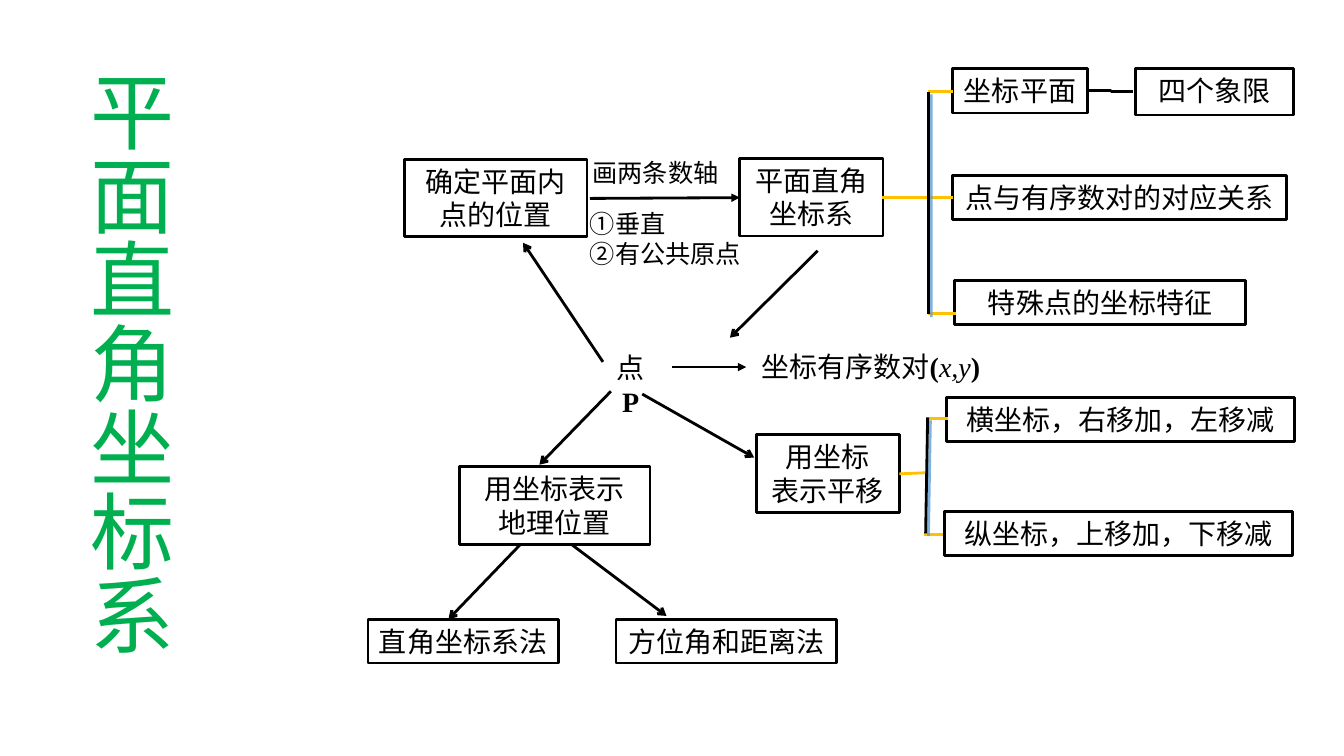
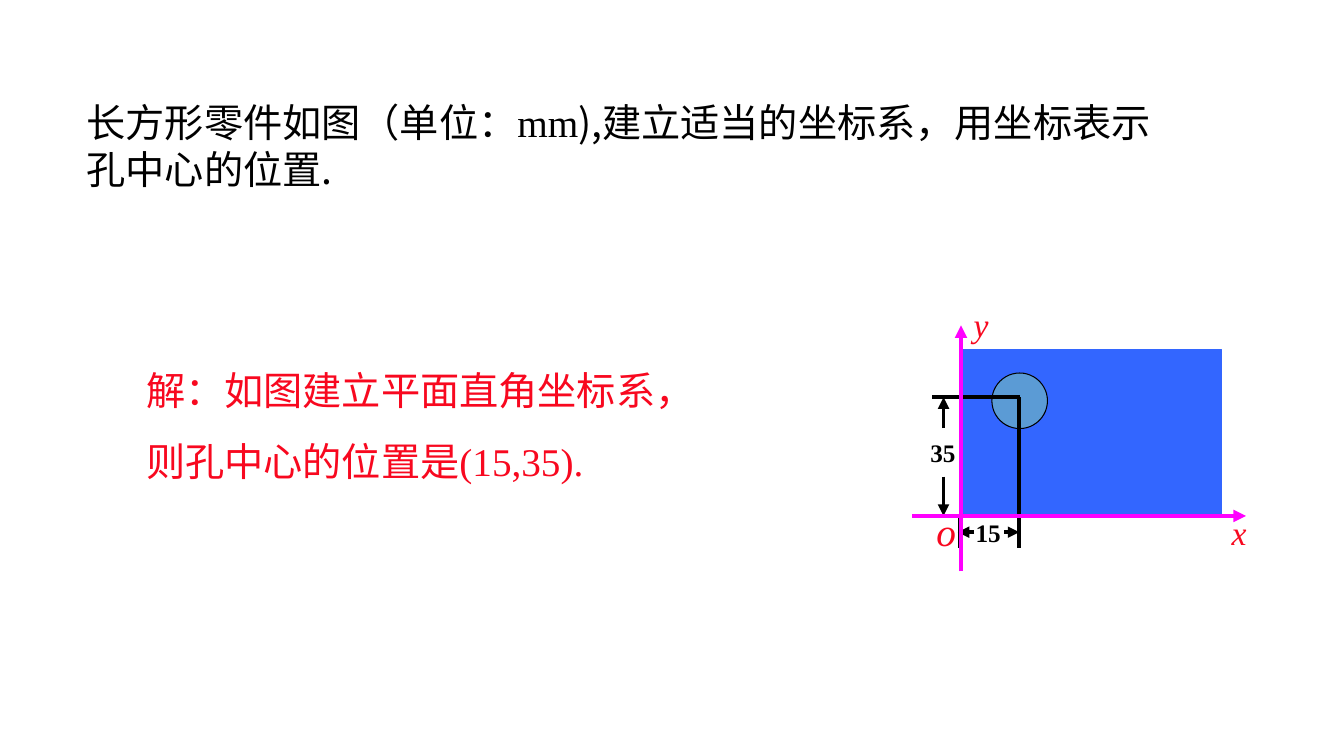
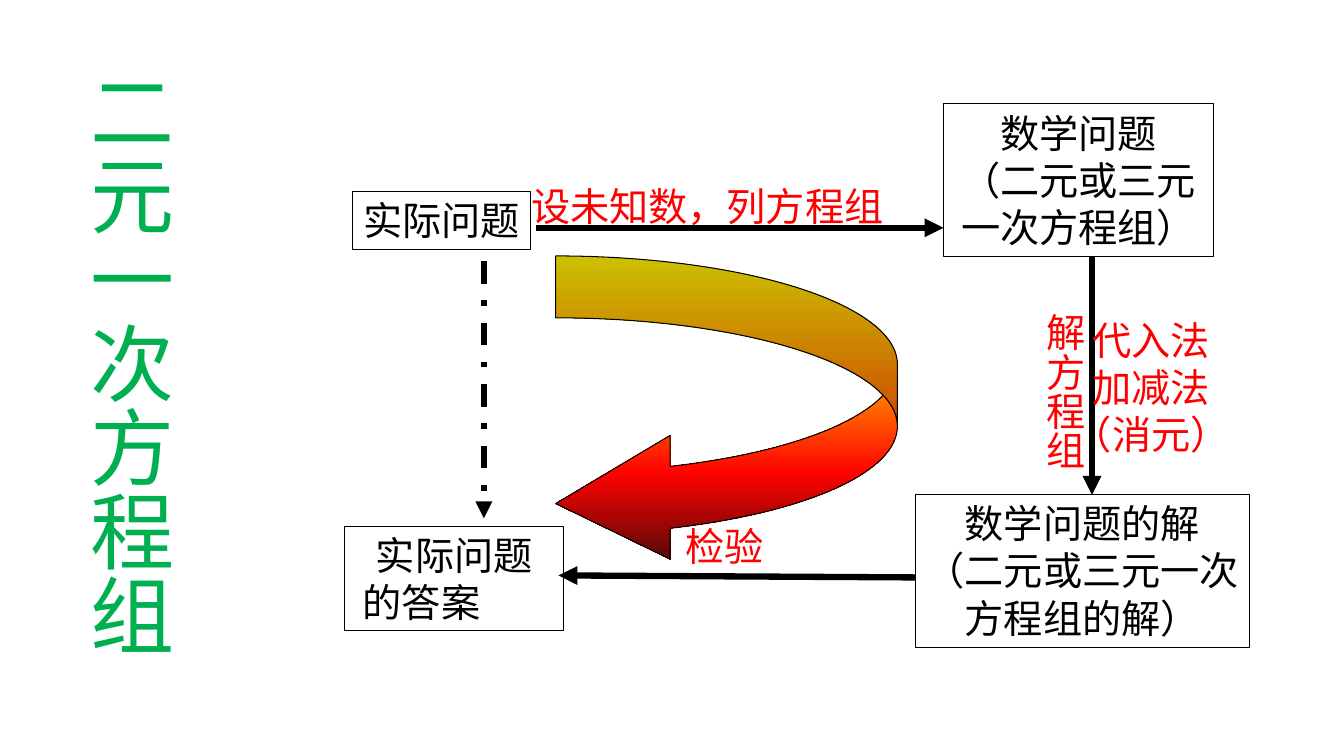
from lxml import etree
from pptx import Presentation
from pptx.dml.color import RGBColor
from pptx.enum.dml import MSO_LINE
from pptx.enum.shapes import MSO_CONNECTOR, MSO_SHAPE
from pptx.enum.text import MSO_ANCHOR, MSO_AUTO_SIZE, PP_ALIGN
from pptx.oxml.ns import qn
from pptx.util import Cm, Pt

LEFT, CENTER = PP_ALIGN.LEFT, PP_ALIGN.CENTER
TOP, BOTTOM = MSO_ANCHOR.TOP, MSO_ANCHOR.BOTTOM
STRAIGHT, ELBOW = MSO_CONNECTOR.STRAIGHT, MSO_CONNECTOR.ELBOW
RECTANGLE, OVAL = MSO_SHAPE.RECTANGLE, MSO_SHAPE.OVAL
CURVED_ARROW = MSO_SHAPE.CURVED_LEFT_ARROW
DASH_DOT, FIXED_SIZE = MSO_LINE.DASH_DOT, MSO_AUTO_SIZE.NONE

BLACK, GREEN, GOLD, RED = "000000", "00B050", "FFC000", "FF0000"
CRIMSON, MAGENTA, PLATE_BLUE, SOFT_BLUE = "F8081F", "FF00FF", "3366FF", "5B9BD5"
CJK_FONT, LATIN_FONT, TITLE_FONT = "Noto Sans CJK SC", "Times New Roman", "Calibri"
LINE_RATIO = 1.2
CM_PER_UNIT = 2.54
SLIDE_SIZE = (13.33, 7.5)
CHAPTER_TITLE_AREA = (0.71, 0.64, 1.95, 5.98)

CJK = (CJK_FONT, False, False)
TITLE = (TITLE_FONT, False, False)
LATIN = (LATIN_FONT, False, False)
BOLD = (LATIN_FONT, True, False)
ITALIC = (LATIN_FONT, False, True)

CONCEPTS = [
    ("确定平面内点的位置", (4.01, 1.58, 1.81, 0.77)),
    ("平面直角\n坐标系", (7.34, 1.57, 1.42, 0.77)),
    ("坐标平面", (9.45, 0.68, 1.34, 0.44)),
    ("四个象限", (11.26, 0.68, 1.57, 0.46)),
    ("点与有序数对的对应关系", (9.45, 1.74, 3.31, 0.44)),
    ("特殊点的坐标特征", (9.47, 2.78, 2.89, 0.44)),
    ("用坐标\n表示平移", (7.5, 4.31, 1.42, 0.77)),
    ("横坐标，右移加，左移减", (9.39, 3.94, 3.45, 0.44)),
    ("纵坐标，上移加，下移减", (9.37, 5.07, 3.45, 0.44)),
    ("用坐标表示\n地理位置", (4.56, 4.63, 1.89, 0.77)),
    ("直角坐标系法", (3.65, 6.15, 1.89, 0.43)),
    ("方位角和距离法", (6.11, 6.15, 2.19, 0.43)),
]
CONCEPT_NOTES = [
    ([[("点", CJK)], [("P", BOLD)]], (5.9, 3.43, 0.71, 0.78), 20, CENTER),
    ("画两条数轴", (5.78, 1.51, 1.47, 0.4), 18, LEFT),
    ("①垂直\n②有公共原点", (5.75, 2.02, 1.7, 0.7), 18, LEFT),
    ([[("坐标有序数对", CJK), ("(", BOLD), ("x,y", ITALIC), (")", BOLD)]],
     (7.34, 3.42, 2.6, 0.43), 20, CENTER),
]
CONCEPT_ARROWS = {
    "triangle": [(5.85, 1.97, 7.34, 1.96), (6.66, 3.64, 7.4, 3.64)],
    "arrow": [
        (8.11, 2.49, 7.24, 3.35), (6.06, 3.88, 5.35, 4.61),
        (5.98, 3.59, 5.19, 2.41), (6.37, 3.91, 7.48, 4.54),
        (5.16, 5.4, 4.45, 6.14), (5.67, 5.4, 6.61, 6.11),
    ],
}
BRACKET_ARMS = [
    (8.75, 1.96, 9.45, 1.96), (9.21, 3.11, 9.48, 3.11), (9.21, 0.91, 9.45, 0.91),
    (8.92, 4.7, 9.21, 4.69), (9.2, 4.15, 9.4, 4.15), (9.16, 5.3, 9.36, 5.3),
]
BRACKET_SPINES = [(9.21, 3.12, 9.21, 0.91), (9.18, 5.29, 9.2, 4.14)]
QUADRANT_LINK = (10.8, 0.9, 11.24, 0.91)

QUESTION = [[("长方形零件如图（单位：", CJK), ("mm", LATIN),
             ("),建立适当的坐标系，用坐标表示孔中心的位置.", CJK)]]
ANSWER = [[("解：如图建立平面直角坐标系，则孔中心的位置是", CJK),
           ("(15,35).", LATIN)]]
PLATE, HOLE = (9.52, 3.47, 2.6, 1.65), (9.84, 3.7, 0.55, 0.55)
EXTENSION_LINES = [
    (10.11, 3.94, 10.11, 5.44), (9.52, 5.12, 9.52, 5.44),
    (10.12, 3.94, 9.24, 3.94), (9.52, 5.12, 9.21, 5.12),
]
DIMENSION_ARROWS = [
    (9.96, 5.28, 10.11, 5.28), (9.66, 5.28, 9.5, 5.28),
    (9.36, 4.25, 9.36, 3.94), (9.36, 4.73, 9.36, 5.12),
]
AXES = [(9.05, 5.12, 12.36, 5.12), (9.53, 5.67, 9.53, 3.23)]
FIGURE_LABELS = [
    ("15", BOLD, (9.58, 5.08, 0.45, 0.4), 18, BLACK),
    ("35", BOLD, (9.13, 4.29, 0.45, 0.4), 18, BLACK),
    ("x", ITALIC, (12.12, 5.03, 0.37, 0.5), 24, CRIMSON),
    ("y", ITALIC, (9.56, 2.97, 0.35, 0.5), 24, CRIMSON),
    ("o", ITALIC, (9.19, 4.98, 0.39, 0.57), 28, CRIMSON),
]

STAGES = [
    ("数学问题的解\n（二元或三元一次\n方程组的解）", (9.08, 4.91, 3.31, 1.51), False),
    ("实际问题", (3.5, 1.9, 1.76, 0.57), False),
    ("数学问题\n（二元或三元一次方程组）", (9.36, 1.03, 2.68, 1.51), True),
]
FINAL_STAGE = ("实际问题\n的答案", (3.42, 5.22, 2.17, 1.04))
STAGE_ARROWS = [
    (5.32, 2.26, 9.36, 2.26), (10.83, 2.54, 10.83, 4.91), (9.08, 5.73, 5.54, 5.71),
]
CHECK_ARROW = (4.8, 2.59, 4.8, 5.14)
STEPS = [
    ("设未知数，列方程组", (5.17, 1.76, 3.7, 0.57), LEFT, False),
    ("解方程组", (10.17, 3.01, 0.67, 1.66), LEFT, True),
    ("检验", (6.7, 5.13, 0.98, 0.57), LEFT, False),
    ("代入法\n加减法\n（消元）", (10.54, 3.09, 1.76, 1.51), CENTER, False),
]
CYCLE_AREA, CYCLE_ADJUSTMENTS = (5.51, 2.54, 3.39, 3.07), (0.2, 0.4, 0.37)
CYCLE_STOPS = [(0, "FFF200"), (45, "FF7A00"), (70, "FF0300"), (100, "4D0808")]


def lengths(values):
    """Turn layout units into lengths."""
    return [Cm(round(value * CM_PER_UNIT, 2)) for value in values]


def rgb(value):
    """Turn a hex string into a colour."""
    return RGBColor.from_string(value)


def set_text(frame, content, size, color=BLACK, align=LEFT, wrap=True,
             anchor=TOP, vertical=False, spacing=None):
    """Fill a frame with plain lines or lists of styled runs."""
    if isinstance(content, str):
        content = [[(text, CJK)] for text in content.split("\n")]
    frame.word_wrap = wrap
    frame.auto_size = FIXED_SIZE
    frame.vertical_anchor = anchor
    if vertical:
        frame._txBody.bodyPr.set("vert", "eaVert")
    for index, pieces in enumerate(content):
        paragraph = frame.add_paragraph() if index else frame.paragraphs[0]
        paragraph.alignment = align
        paragraph.space_before = Pt(0)
        paragraph.line_spacing = spacing or Pt(size * LINE_RATIO)
        for text, (font_name, bold, italic) in pieces:
            run = paragraph.add_run()
            run.text = text
            run.font.size = Pt(size)
            run.font.bold, run.font.italic = bold, italic
            run.font.color.rgb = rgb(color)
            run.font.name = font_name
            east_asian = etree.SubElement(run.font._element, qn("a:ea"))
            east_asian.set("typeface", CJK_FONT)


def add_label(slide, content, area, size, **style):
    """Add a text box that keeps its line breaks."""
    label = slide.shapes.add_textbox(*lengths(area))
    set_text(label.text_frame, content, size, wrap=False, **style)


def add_figure(slide, kind, area, fill=None, line=BLACK, width=0.75):
    """Add an outlined preset shape."""
    figure = slide.shapes.add_shape(kind, *lengths(area))
    figure.shadow.inherit = False
    if fill:
        figure.fill.solid()
        figure.fill.fore_color.rgb = rgb(fill)
    else:
        figure.fill.background()
    figure.line.color.rgb = rgb(line)
    figure.line.width = Pt(width)
    return figure


def add_box(slide, content, area, size, width, wrap=True):
    """Add an outlined box with centred text."""
    box = add_figure(slide, RECTANGLE, area, width=width)
    set_text(box.text_frame, content, size, align=CENTER, wrap=wrap)
    return box


def add_line(slide, ends, width, color=BLACK, tip=None, kind=STRAIGHT,
             dash=None, shadow=False):
    """Add a line, with an arrowhead or a blue shadow if asked."""
    line = slide.shapes.add_connector(kind, *lengths(ends))
    line.line.color.rgb = rgb(color)
    line.line.width = Pt(width)
    if dash:
        line.line.dash_style = dash
    properties = line._element.spPr
    if tip:
        etree.SubElement(properties.find(qn("a:ln")), qn("a:tailEnd")).set("type", tip)
    effects = etree.SubElement(properties, qn("a:effectLst"))
    if shadow:
        outer = etree.SubElement(effects, qn("a:outerShdw"), blurRad="0",
                                 dist=str(Pt(2.8)), dir="2700000")
        tint = etree.SubElement(outer, qn("a:srgbClr"), val=SOFT_BLUE)
        etree.SubElement(tint, qn("a:alpha"), val="77000")


def place(placeholder, area):
    """Move a placeholder to an area."""
    (placeholder.left, placeholder.top,
     placeholder.width, placeholder.height) = lengths(area)
    return placeholder.text_frame


def add_chapter_slide(deck, title):
    """Add a slide with the upright green chapter title."""
    slide = deck.slides.add_slide(deck.slide_layouts[5])
    set_text(place(slide.shapes.title, CHAPTER_TITLE_AREA), [[(title, TITLE)]], 60,
             color=GREEN, align=CENTER, anchor=BOTTOM, vertical=True, spacing=0.7)
    return slide


def build_coordinates(deck):
    """Build the concept map of the coordinate system."""
    slide = add_chapter_slide(deck, "平面直角坐标系")
    for text, area in CONCEPTS:
        add_box(slide, text, area, 20, 2)
    for content, area, size, align in CONCEPT_NOTES:
        add_label(slide, content, area, size, align=align)
    add_line(slide, QUADRANT_LINK, 2, kind=ELBOW)
    for ends in BRACKET_ARMS:
        add_line(slide, ends, 2, GOLD)
    for ends in BRACKET_SPINES:
        add_line(slide, ends, 2, shadow=True)
    for tip, arrows in CONCEPT_ARROWS.items():
        for ends in arrows:
            add_line(slide, ends, 2, tip=tip)


def build_problem(deck):
    """Build the worked problem with its figure."""
    slide = deck.slides.add_slide(deck.slide_layouts[1])
    set_text(place(slide.shapes.title, (0.76, 0.93, 11.13, 1.04)), QUESTION, 28)
    answer = place(slide.placeholders[1], (1.35, 3.35, 5.26, 1.5))
    layout = answer.paragraphs[0]._p.get_or_add_pPr()
    layout.set("marL", "0")
    layout.set("indent", "0")
    etree.SubElement(layout, qn("a:buNone"))
    set_text(answer, ANSWER, 28, CRIMSON, spacing=Pt(28 * LINE_RATIO * 1.5))
    add_figure(slide, RECTANGLE, PLATE, PLATE_BLUE, PLATE_BLUE)
    add_figure(slide, OVAL, HOLE, SOFT_BLUE)
    for ends in EXTENSION_LINES:
        add_line(slide, ends, 3)
    for ends in DIMENSION_ARROWS:
        add_line(slide, ends, 2.75, tip="triangle")
    for ends in AXES:
        add_line(slide, ends, 3, MAGENTA, "triangle")
    for text, style, area, size, color in FIGURE_LABELS:
        add_label(slide, [[(text, style)]], area, size, color=color)


def add_cycle_arrow(slide):
    """Add the curved arrow with its four-colour gradient."""
    cycle = add_figure(slide, CURVED_ARROW, CYCLE_AREA)
    for index, value in enumerate(CYCLE_ADJUSTMENTS):
        cycle.adjustments[index] = value
    cycle.fill.gradient()
    cycle.fill.gradient_angle = 270
    stops = cycle._element.spPr.find(qn("a:gradFill")).find(qn("a:gsLst"))
    for stop in list(stops):
        stops.remove(stop)
    for percent, color in CYCLE_STOPS:
        stop = etree.SubElement(stops, qn("a:gs"), pos=str(percent * 1000))
        etree.SubElement(stop, qn("a:srgbClr"), val=color)


def build_equations(deck):
    """Build the cycle of solving equation systems."""
    slide = add_chapter_slide(deck, "二元一次方程组")
    for text, area, wrap in STAGES:
        add_box(slide, text, area, 28, 0.75, wrap)
    final_box = add_box(slide, *FINAL_STAGE, 28, 0.75)
    last_line = final_box.text_frame.paragraphs[1]
    last_line.alignment = LEFT
    last_line._p.get_or_add_pPr().set("marL", str(Cm(0.2)))
    for ends in STAGE_ARROWS:
        add_line(slide, ends, 4.5, tip="triangle")
    add_line(slide, CHECK_ARROW, 4, tip="triangle", dash=DASH_DOT)
    add_cycle_arrow(slide)
    for text, area, align, vertical in STEPS:
        add_label(slide, text, area, 28, color=RED, align=align, vertical=vertical)


def main():
    """Build and save the deck."""
    deck = Presentation()
    deck.slide_width, deck.slide_height = lengths(SLIDE_SIZE)
    build_coordinates(deck)
    build_problem(deck)
    build_equations(deck)
    deck.save("out.pptx")


if __name__ == "__main__":
    main()
